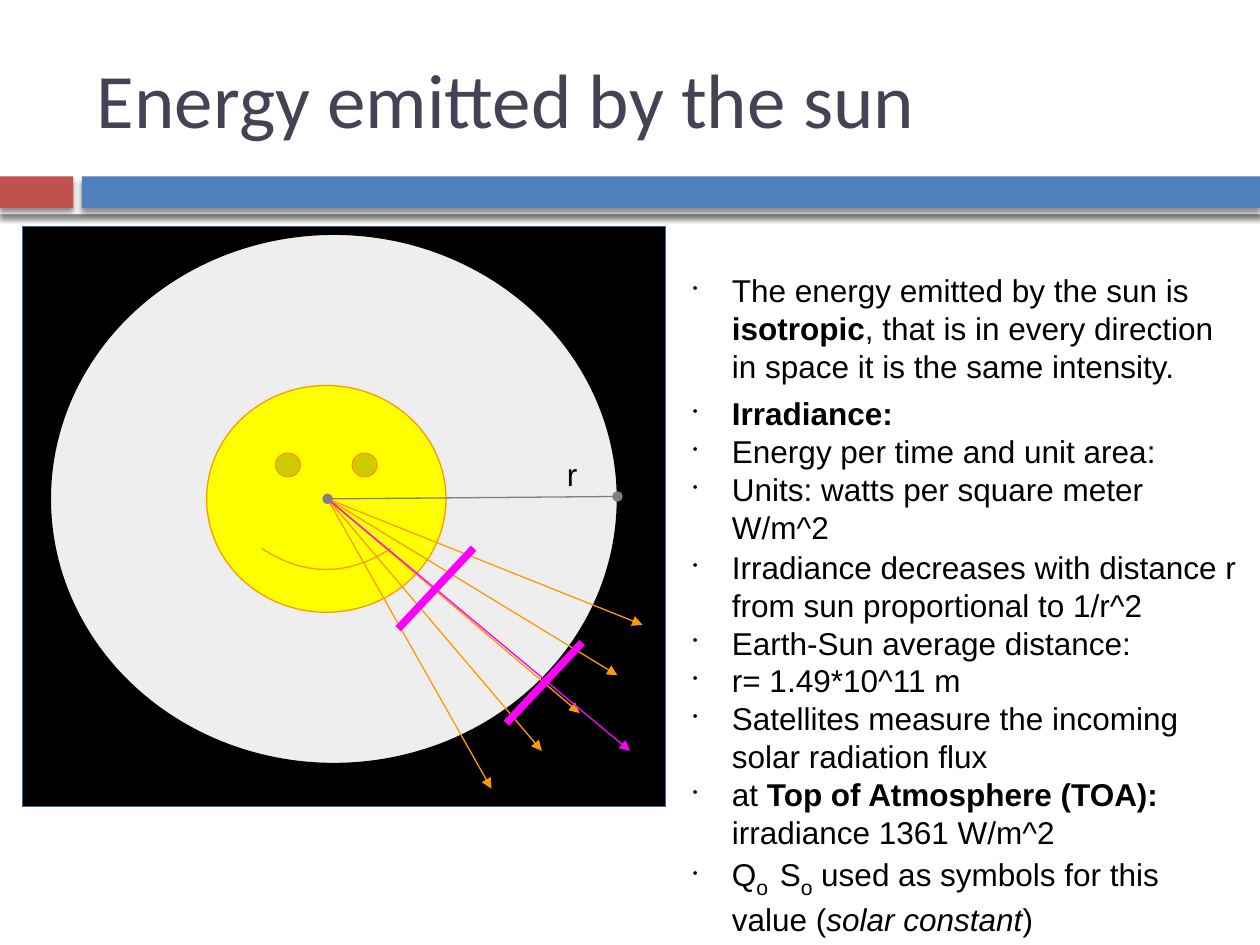
from dataclasses import dataclass

from lxml.etree import SubElement
from pptx import Presentation
from pptx.dml.color import RGBColor
from pptx.enum.shapes import MSO_CONNECTOR as Connector, MSO_SHAPE as Shape
from pptx.enum.text import MSO_ANCHOR as Anchor, PP_ALIGN as Align
from pptx.oxml.ns import qn
from pptx.util import Pt

COLORS = {
    "white": "FFFFFF", "black": "000000", "title": "424456",
    "red": "C0504D", "blue": "4F81BD", "frame": "3465A4",
    "shell": "EEEEEE", "sun": "FFFF00", "ray": "FF9900",
    "area": "FF00FF", "radius": "808080",
}
TEXT_SIZE = 18
INDENT = 22.4


@dataclass
class Block:
    kind: Shape
    box: tuple
    fill: str
    line: str | None = None


@dataclass
class Stroke:
    start: tuple
    end: tuple
    color: str
    width: float = 0.75
    head: str | None = None
    tail: str | None = None


@dataclass
class Span:
    text: str
    bold: bool = False
    italic: bool = False
    subscript: bool = False


@dataclass
class TextBlock:
    box: tuple
    items: list


BANDS = [
    Block(Shape.RECTANGLE, (0, 97.2, 720, 25.2), "white"),
    Block(Shape.RECTANGLE, (0, 100.8, 41.8, 18), "red"),
    Block(Shape.RECTANGLE, (46.8, 100.8, 673.2, 18), "blue"),
]
SUN_PARTS = [
    Block(Shape.RECTANGLE, (13, 129.6, 367.2, 331.2), "black", "frame"),
    Block(Shape.OVAL, (28.8, 133.9, 324, 302.4), "shell", "black"),
    Block(Shape.SMILEY_FACE, (118.1, 220.3, 136.8, 129.6), "sun", "ray"),
]

CENTER = (187.2, 285.1)
RAY_ENDS = [(309.6, 429.1), (352.8, 385.9), (331.2, 407.5),
            (280.8, 450.7), (367.2, 357.1)]
STROKES = [
    *(Stroke(CENTER, end, "ray", tail="triangle") for end in RAY_ENDS),
    Stroke((332.6, 367.2), (289.4, 413.3), "area", 4.31),
    Stroke(CENTER, (360, 429.1), "area", tail="triangle"),
    Stroke((270.7, 313.2), (227.5, 359.3), "area", 4.31),
    Stroke(CENTER, (352.8, 283.7), "radius", head="oval", tail="oval"),
]

TEXT_BLOCKS = [
    TextBlock((388.8, 151.5, 329, 72), [
        [Span("The energy emitted by the sun is "), Span("isotropic", bold=True),
         Span(", that is in every direction\vin space it is the same intensity.")],
    ]),
    TextBlock((388.8, 221.8, 324.7, 87.8), [
        [Span("Irradiance:", bold=True)],
        [Span("Energy per time and unit area:")],
        [Span("Units: watts per square meter W/m^2")],
    ]),
    TextBlock((388.8, 309.6, 328.3, 211.7), [
        [Span("Irradiance decreases with distance r from sun proportional to 1/r^2")],
        [Span("Earth-Sun average distance:")],
        [Span("r= 1.49*10^11 m")],
        [Span("Satellites measure the incoming solar radiation flux")],
        [Span("at "), Span("Top of Atmosphere (TOA):\v", bold=True),
         Span("irradiance 1361 W/m^2")],
        [Span("Q"), Span("o  ", subscript=True), Span("S"), Span("o", subscript=True),
         Span(" used as symbols for this value ("),
         Span("solar constant", italic=True), Span(")")],
    ]),
]


def color(name: str) -> RGBColor:
    return RGBColor.from_string(COLORS[name])


def points(values: tuple) -> list:
    return [Pt(value) for value in values]


def draw_block(page, block: Block):
    shape = page.shapes.add_shape(block.kind, *points(block.box))
    shape.shadow.inherit = False
    shape.fill.solid()
    shape.fill.fore_color.rgb = color(block.fill)
    if block.line:
        shape.line.color.rgb = color(block.line)
        shape.line.width = Pt(0.75)
    else:
        shape.line.fill.background()
    return shape


def add_drop_shadow(shape) -> None:
    effects = shape.element.spPr.find(qn("a:effectLst"))
    shadow = SubElement(effects, qn("a:outerShdw"), blurRad=str(Pt(3)),
                        dist=str(Pt(2.4)), dir="5400000", rotWithShape="0")
    tint = SubElement(shadow, qn("a:srgbClr"), val=COLORS["black"])
    SubElement(tint, qn("a:alpha"), val="45000")


def draw_stroke(page, stroke: Stroke) -> None:
    connector = page.shapes.add_connector(
        Connector.STRAIGHT, *points(stroke.start + stroke.end))
    connector.line.color.rgb = color(stroke.color)
    connector.line.width = Pt(stroke.width)
    properties = connector.element.spPr
    outline = properties.find(qn("a:ln"))
    for tag, kind in (("a:headEnd", stroke.head), ("a:tailEnd", stroke.tail)):
        if kind:
            SubElement(outline, qn(tag), type=kind)
    SubElement(properties, qn("a:effectLst"))


def format_font(font, name: str, size: float, ink: str) -> None:
    font.name = name
    font.size = Pt(size)
    font.color.rgb = color(ink)


def add_text_frame(page, box: tuple):
    frame = page.shapes.add_textbox(*points(box)).text_frame
    frame.word_wrap = True
    return frame


def add_bullet(para) -> None:
    properties = para._p.get_or_add_pPr()
    properties.set("marL", str(Pt(INDENT)))
    properties.set("indent", str(-Pt(INDENT)))
    SubElement(properties, qn("a:buSzPct"), val="45000")
    SubElement(properties, qn("a:buChar"), char="•")


def draw_text_block(page, block: TextBlock) -> None:
    frame = add_text_frame(page, block.box)
    for number, spans in enumerate(block.items):
        para = frame.add_paragraph() if number else frame.paragraphs[0]
        add_bullet(para)
        for span in spans:
            for part, text in enumerate(span.text.split("\v")):
                if part:
                    para.add_line_break()
                if not text:
                    continue
                run = para.add_run()
                run.text = text
                size = 20.8 if span.subscript else TEXT_SIZE
                format_font(run.font, "Arial", size, "black")
                run.font.bold = span.bold
                run.font.italic = span.italic
                if span.subscript:
                    run._r.get_or_add_rPr().set("baseline", "-25000")


def draw_title(page) -> None:
    title = page.shapes.title
    title.left, title.top, title.width, title.height = points((48.2, 21.6, 635.8, 68.4))
    title.text_frame.text = "Energy emitted by the sun"
    title.text_frame.vertical_anchor = Anchor.MIDDLE
    para = title.text_frame.paragraphs[0]
    para.alignment = Align.LEFT
    format_font(para.runs[0].font, "Calibri", 44, "title")


def main() -> None:
    deck = Presentation()
    deck.slide_width, deck.slide_height = points((720, 540))
    page = deck.slides.add_slide(deck.slide_layouts[5])
    draw_title(page)
    for band in BANDS:
        add_drop_shadow(draw_block(page, band))
    for part in SUN_PARTS:
        draw_block(page, part)
    for stroke in STROKES:
        draw_stroke(page, stroke)
    for block in TEXT_BLOCKS:
        draw_text_block(page, block)
    label = add_text_frame(page, (316.8, 256.3, 36, 27.4))
    label.text = "r"
    format_font(label.paragraphs[0].runs[0].font, "Arial", TEXT_SIZE, "black")
    deck.save("out.pptx")


if __name__ == "__main__":
    main()
